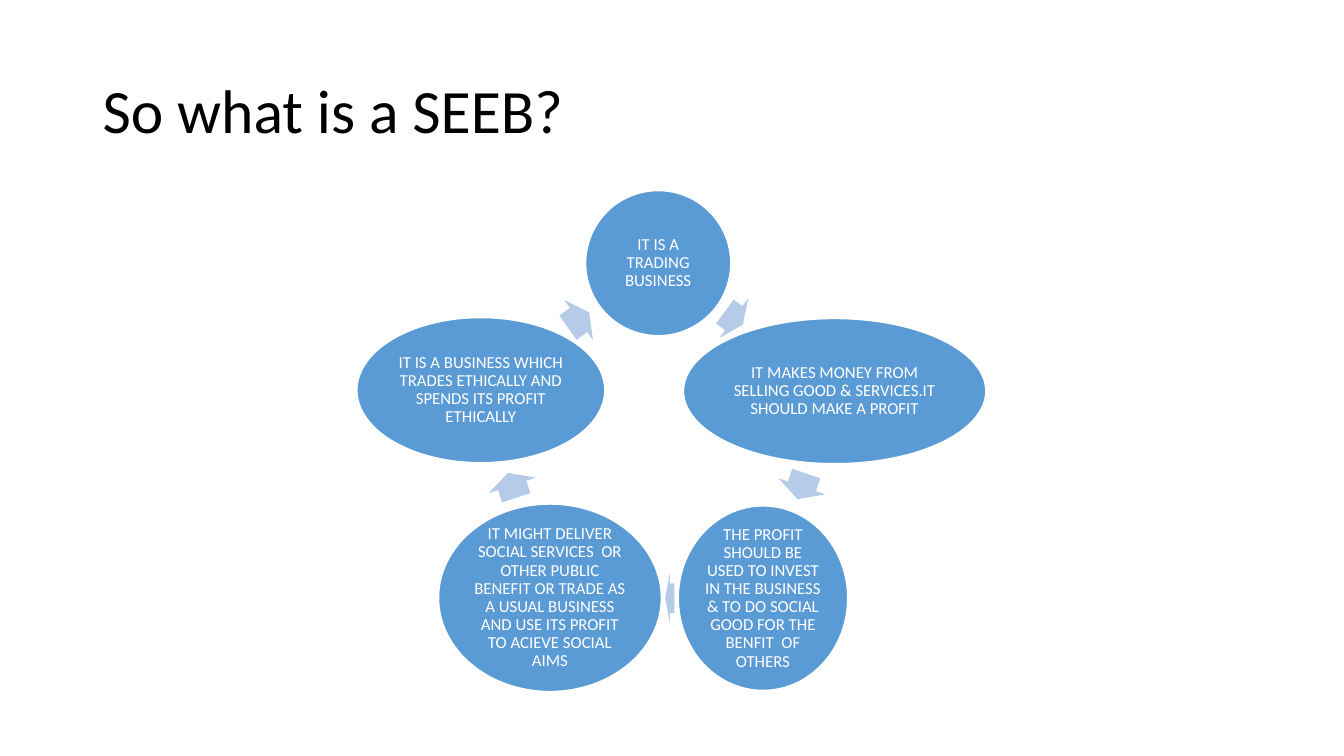
from dataclasses import dataclass

from pptx import Presentation
from pptx.dml.color import RGBColor
from pptx.enum.shapes import MSO_SHAPE
from pptx.enum.text import MSO_ANCHOR, PP_ALIGN
from pptx.shapes.autoshape import Shape
from pptx.slide import Slide
from pptx.util import Pt

ELLIPSE = MSO_SHAPE.OVAL
ARROW = MSO_SHAPE.RIGHT_ARROW
MIDDLE = MSO_ANCHOR.MIDDLE
LEFT = PP_ALIGN.LEFT
CENTER = PP_ALIGN.CENTER

FONT = "Calibri"
BLACK = "000000"
WHITE = "FFFFFF"
BLUE = "5B9BD5"
PALE_BLUE = "B5CBE7"
ARROW_HEIGHT = 35.3
ELLIPSE_INSET = 1.4


@dataclass
class Step:
    """An ellipse of the cycle, placed by its centre."""
    text: str
    center_x: float
    center_y: float
    width: float
    height: float


@dataclass
class CycleArrow:
    """An arrow between two steps, placed by its centre before rotation."""
    center_x: float
    center_y: float
    width: float
    rotation: float


STEPS = [
    Step("IT IS A TRADING BUSINESS", 470.2, 188, 103.7, 103.7),
    Step("IT MAKES MONEY FROM SELLING GOOD & SERVICES.IT SHOULD MAKE A PROFIT",
         596.2, 279.4, 216, 103.7),
    Step("THE PROFIT SHOULD BE USED TO INVEST IN THE BUSINESS & TO DO SOCIAL "
         "GOOD FOR THE BENFIT  OF OTHERS", 545, 427.3, 121, 131.8),
    Step("IT MIGHT DELIVER SOCIAL SERVICES  OR OTHER PUBLIC BENEFIT OR TRADE AS "
         "A USUAL BUSINESS AND USE ITS PROFIT TO ACIEVE SOCIAL AIMS",
         392.8, 427, 159.1, 133.9),
    Step("IT IS A BUSINESS WHICH TRADES ETHICALLY AND SPENDS ITS PROFIT ETHICALLY",
         343.5, 278.7, 177.1, 103.7),
]

ARROWS = [
    CycleArrow(524.2, 227.2, 15.8, 36),
    CycleArrow(572.8, 347.4, 19.4, 109),
    CycleArrow(478.4, 427.3, 6.5, 180),
    CycleArrow(365.8, 346.7, 18.7, 251.6),
    CycleArrow(413.3, 228.6, 18.7, 324.5),
]


def color(value: str) -> RGBColor:
    return RGBColor.from_string(value)


def set_text(shape: Shape, text: str, size: float, font_color: str,
             alignment: PP_ALIGN, inset_x: float, inset_y: float) -> None:
    frame = shape.text_frame
    frame_format = {
        "word_wrap": True, "vertical_anchor": MIDDLE,
        "margin_left": Pt(inset_x), "margin_right": Pt(inset_x),
        "margin_top": Pt(inset_y), "margin_bottom": Pt(inset_y),
    }
    for name, value in frame_format.items():
        setattr(frame, name, value)
    paragraph = frame.paragraphs[0]
    paragraph.alignment = alignment
    paragraph.line_spacing = 0.9
    run = paragraph.add_run()
    run.text = text
    for name, value in {"name": FONT, "size": Pt(size)}.items():
        setattr(run.font, name, value)
    run.font.color.rgb = color(font_color)


def add_centered_shape(slide: Slide, kind: MSO_SHAPE, center_x: float, center_y: float,
                       width: float, height: float, fill: str) -> Shape:
    shape = slide.shapes.add_shape(kind, Pt(center_x - width / 2), Pt(center_y - height / 2),
                                   Pt(width), Pt(height))
    shape.shadow.inherit = False
    shape.fill.solid()
    shape.fill.fore_color.rgb = color(fill)
    return shape


def add_step(slide: Slide, step: Step) -> None:
    ellipse = add_centered_shape(slide, ELLIPSE, step.center_x, step.center_y,
                                 step.width, step.height, BLUE)
    ellipse.line.color.rgb = color(WHITE)
    ellipse.line.width = Pt(1)
    set_text(ellipse, step.text, 12, WHITE, CENTER, ELLIPSE_INSET, ELLIPSE_INSET)


def add_arrow(slide: Slide, cycle_arrow: CycleArrow) -> None:
    arrow = add_centered_shape(slide, ARROW, cycle_arrow.center_x, cycle_arrow.center_y,
                               cycle_arrow.width, ARROW_HEIGHT, PALE_BLUE)
    arrow.line.fill.background()
    arrow.rotation = cycle_arrow.rotation
    arrow.adjustments[0] = 0.6
    arrow.adjustments[1] = 0.5


def main() -> None:
    presentation = Presentation()
    presentation.slide_width = Pt(960)
    presentation.slide_height = Pt(540)
    slide = presentation.slides.add_slide(presentation.slide_layouts[6])

    title = slide.shapes.add_textbox(Pt(66.2), Pt(28.8), Pt(828), Pt(104.4))
    set_text(title, "So what is a SEEB?", 44, BLACK, LEFT, 7.2, 3.6)
    for step, cycle_arrow in zip(STEPS, ARROWS):
        add_step(slide, step)
        add_arrow(slide, cycle_arrow)

    presentation.save("out.pptx")


if __name__ == "__main__":
    main()
